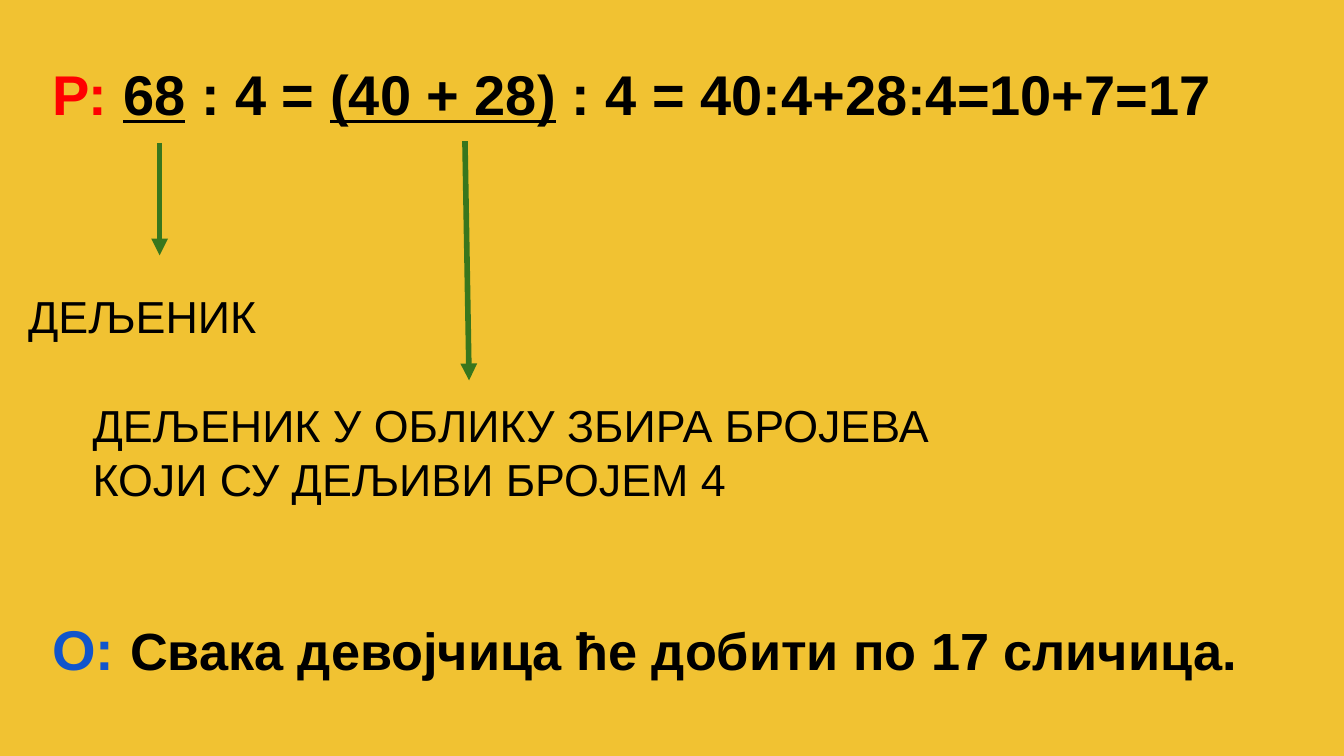
from lxml import etree
from pptx import Presentation
from pptx.dml.color import RGBColor
from pptx.enum.shapes import MSO_CONNECTOR
from pptx.oxml.ns import qn
from pptx.util import Pt

COLORS = {
    "background": "F1C232",
    "solution": "FF0000",
    "answer": "1155CC",
    "text": "000000",
    "arrow": "38761D",
}
INSET = Pt(7.2)


def rgb(name):
    return RGBColor.from_string(COLORS[name])


def add_text(s, box, runs):
    """Write one paragraph of (text, color, format) runs into the box."""
    tf = s.shapes.add_textbox(*map(Pt, box)).text_frame
    tf.word_wrap = True
    for side in ("left", "top", "right", "bottom"):
        setattr(tf, f"margin_{side}", INSET)
    p = tf.paragraphs[0]
    for text, color, fmt in runs:
        r = p.add_run()
        r.text = text
        r.font.name = "Arial"
        r.font.color.rgb = rgb(color)
        for key, value in fmt.items():
            setattr(r.font, key, value)


def add_arrow(s, x1, y1, x2, y2):
    arrow = s.shapes.add_connector(MSO_CONNECTOR.STRAIGHT, Pt(x1), Pt(y1), Pt(x2), Pt(y2))
    arrow.line.color.rgb = rgb("arrow")
    arrow.line.width = Pt(3)
    etree.SubElement(arrow.line._get_or_add_ln(), qn("a:tailEnd"), type="triangle")
    etree.SubElement(arrow._element.spPr, qn("a:effectLst"))


def add_solution(s, box):
    plain = {"size": Pt(30), "bold": True}
    underlined = {**plain, "underline": True}
    add_text(s, box, [
        ("Р: ", "solution", plain),
        ("68", "text", underlined),
        (" : 4 = ", "text", plain),
        ("(40 + 28)", "text", underlined),
        (" : 4 = 40:4+28:4=10+7=17", "text", plain),
    ])


def add_explanation(s, box, text):
    add_text(s, box, [(text, "text", {"size": Pt(24)})])


def add_answer(s, box):
    add_text(s, box, [
        ("О: ", "answer", {"size": Pt(30), "bold": True}),
        ("Свака девојчица ће добити по 17 сличица.", "text", {"size": Pt(28), "bold": True}),
    ])


def main():
    prs = Presentation()
    prs.slide_width, prs.slide_height = Pt(720), Pt(405)
    s = prs.slides.add_slide(prs.slide_layouts[6])
    s.background.fill.solid()
    s.background.fill.fore_color.rgb = rgb("background")

    add_solution(s, (21, 24.5, 687.6, 112.3))
    add_arrow(s, 85.5, 76.5, 85.5, 136.8)
    add_explanation(s, (8, 147.6, 154.8, 67.7), "ДЕЉЕНИК")
    add_arrow(s, 249.1, 75.6, 251.3, 203.8)
    add_explanation(s, (42.5, 206, 471.6, 60.5),
                    "ДЕЉЕНИК У ОБЛИКУ ЗБИРА БРОЈЕВА КОЈИ СУ ДЕЉИВИ БРОЈЕМ 4")
    add_answer(s, (21, 321.8, 687.6, 73.4))
    prs.save("out.pptx")


if __name__ == "__main__":
    main()
